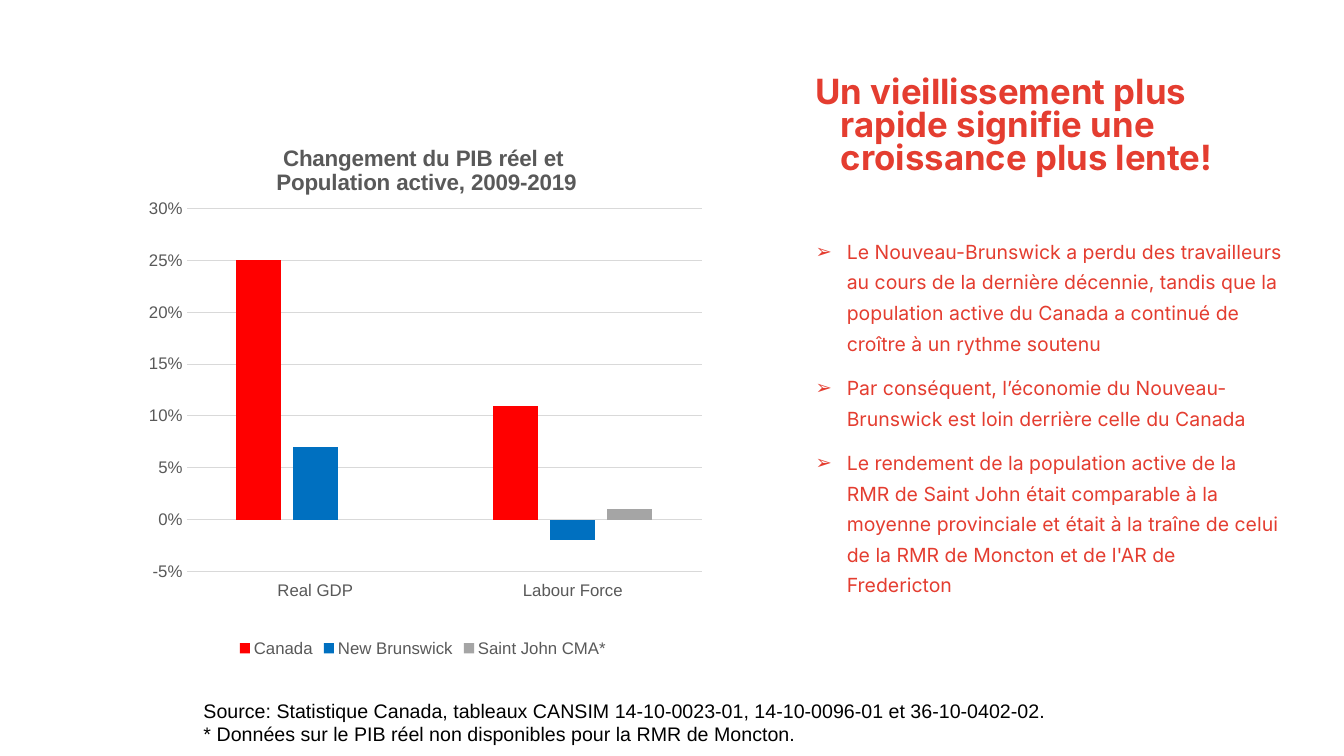
from pptx import Presentation
from pptx.chart.data import CategoryChartData
from pptx.dml.color import RGBColor
from pptx.enum.chart import (XL_CHART_TYPE, XL_LEGEND_POSITION,
                             XL_TICK_LABEL_POSITION, XL_TICK_MARK)
from pptx.oxml.ns import qn
from pptx.util import Inches, Pt
from lxml import etree

COLUMNS = XL_CHART_TYPE.COLUMN_CLUSTERED
BOTTOM = XL_LEGEND_POSITION.BOTTOM
LOW = XL_TICK_LABEL_POSITION.LOW
NO_TICK = XL_TICK_MARK.NONE

COLORS = {
    "accent": "E43D30", "black": "000000", "gray": "595959", "grid": "D9D9D9",
    "Canada": "FF0000", "New Brunswick": "0070C0", "Saint John CMA*": "A5A5A5",
}
RGB = {name: RGBColor.from_string(code) for name, code in COLORS.items()}
WIDTH, HEIGHT = 5.83, 5.32  # chart size in inches


def add_text(box, lines, font, size, color, bold=False):
    """Add a wrapped text box with one paragraph per line; return its paragraphs."""
    frame = slide.shapes.add_textbox(*map(Inches, box)).text_frame
    frame.word_wrap = True
    frame.text = "\n".join(lines)
    for para in frame.paragraphs:
        for run in para.runs:
            run.font.name = font
            run.font.size = Pt(size)
            run.font.bold = bold
            run.font.color.rgb = RGB[color]
    return frame.paragraphs


def set_layout(parent, index, **parts):
    """Give a chart part a manual layout, as fractions of the chart."""
    for old in parent.findall(qn("c:layout")):
        parent.remove(old)
    layout = etree.Element(qn("c:layout"))
    manual = etree.SubElement(layout, qn("c:manualLayout"))
    for tag, value in parts.items():
        etree.SubElement(manual, qn("c:" + tag)).set("val", str(value))
    parent.insert(index, layout)


prs = Presentation()
prs.slide_width = Inches(13.33)
prs.slide_height = Inches(7.5)
slide = prs.slides.add_slide(prs.slide_layouts[6])

# Heading
heading = add_text((7.74, 0.72, 5.09, 1.3),
                   ["Un vieillissement plus rapide signifie une croissance plus lente!"],
                   "Inter", 24.8, "accent", True)[0]
heading.line_spacing = 0.8
props = heading._p.get_or_add_pPr()
props.set("marL", str(Inches(0.5)))
props.set("indent", str(Inches(-0.25)))

# Bullet points
points = add_text((7.74, 2.26, 5.09, 4.3), [
    "Le Nouveau-Brunswick a perdu des travailleurs au cours de la dernière décennie, "
    "tandis que la population active du Canada a continué de croître à un rythme soutenu",
    "Par conséquent, l’économie du Nouveau-Brunswick est loin derrière celle du Canada",
    "Le rendement de la population active de la RMR de Saint John était comparable à la "
    "moyenne provinciale et était à la traîne de celui de la RMR de Moncton et de l'AR "
    "de Fredericton",
], "Inter", 13.9, "accent")
for i, point in enumerate(points):
    point.line_spacing = 1.31
    point.space_before = Pt(10 if i else 0)
    props = point._p.get_or_add_pPr()
    props.set("marL", str(Inches(0.56)))
    props.set("indent", str(Inches(-0.31)))
    tint = etree.SubElement(props, qn("a:buClr"))
    etree.SubElement(tint, qn("a:srgbClr")).set("val", COLORS["accent"])
    etree.SubElement(props, qn("a:buFont")).set("typeface", "Arial")
    etree.SubElement(props, qn("a:buChar")).set("char", "➢")

# Source note
add_text((1.92, 6.88, 9.36, 0.57), [
    "Source: Statistique Canada, tableaux CANSIM 14-10-0023-01, 14-10-0096-01 "
    "et 36-10-0402-02.",
    "* Données sur le PIB réel non disponibles pour la RMR de Moncton.",
], "Arial", 14, "black")

# Chart
data = CategoryChartData(number_format="0%")
data.categories = ["Real GDP", "Labour Force"]
data.add_series("Canada", [0.25, 0.11])
data.add_series("New Brunswick", [0.07, -0.02])
data.add_series("Saint John CMA*", [None, 0.01])
chart = slide.shapes.add_chart(COLUMNS, Inches(1.28), Inches(1.24),
                               Inches(WIDTH), Inches(HEIGHT), data).chart
chart.font.name = "Arial"
chart.font.size = Pt(12)
chart.font.color.rgb = RGB["gray"]

title = chart.chart_title
title.text_frame.text = "Changement du PIB réel et\n Population active, 2009-2019"
for para in title.text_frame.paragraphs:
    for run in para.runs:
        run.font.name = "Arial"
        run.font.size = Pt(16)
        run.font.bold = True
        run.font.color.rgb = RGB["gray"]
set_layout(title._element, 1, xMode="edge", yMode="edge",
           x=1.37 / WIDTH, y=0.16 / HEIGHT)

plot = chart.plots[0]
plot.gap_width = 219
plot.overlap = -27
plot.vary_by_categories = False
for series in plot.series:
    series.invert_if_negative = False
    series.format.fill.solid()
    series.format.fill.fore_color.rgb = RGB[series.name]
set_layout(chart._chartSpace.chart.plotArea, 0, layoutTarget="inner",
           xMode="edge", yMode="edge", x=0.57 / WIDTH, y=0.83 / HEIGHT,
           w=5.11 / WIDTH, h=3.6 / HEIGHT)

cats, vals = chart.category_axis, chart.value_axis
for axis in (cats, vals):
    axis.major_tick_mark = axis.minor_tick_mark = NO_TICK
cats.tick_label_position = LOW
vals.minimum_scale, vals.maximum_scale, vals.major_unit = -0.05, 0.3, 0.05
vals.tick_labels.number_format = "0%"
vals.tick_labels.number_format_is_linked = False
vals.format.line.fill.background()
for line in (cats.format.line, vals.major_gridlines.format.line):
    line.width = Pt(0.75)
    line.color.rgb = RGB["grid"]

chart.has_legend = True
chart.legend.position = BOTTOM
chart.legend.include_in_layout = False

prs.save("out.pptx")
